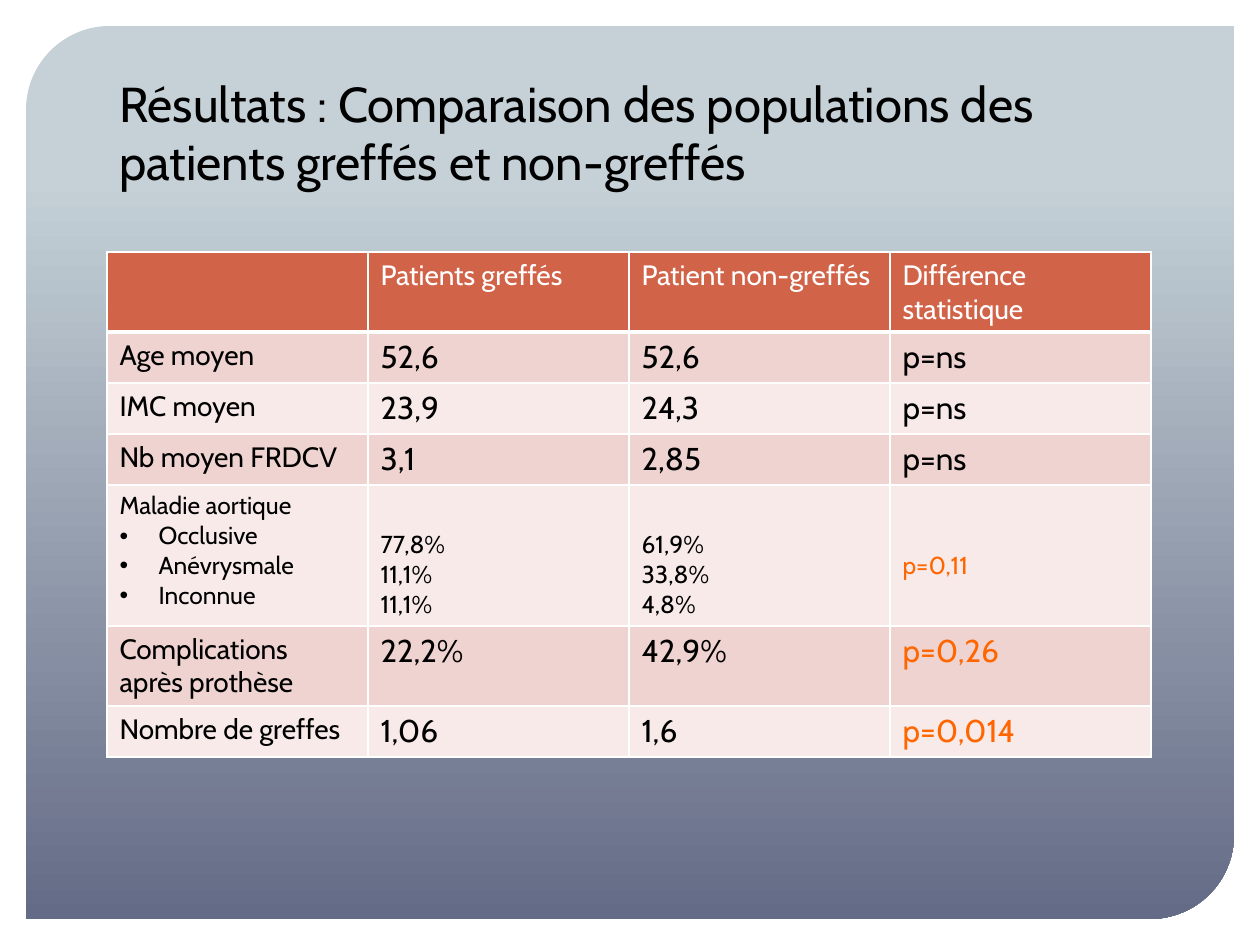
from dataclasses import dataclass

from pptx import Presentation
from pptx.dml.color import RGBColor
from pptx.enum.shapes import MSO_SHAPE
from pptx.enum.text import MSO_ANCHOR
from pptx.oxml import parse_xml
from pptx.oxml.ns import nsdecls
from pptx.util import Emu, Pt


@dataclass(frozen=True)
class Theme:
    font: str = "Cabin"
    ink: str = "000000"
    white: str = "FFFFFF"
    sky: str = "C5D1D7"
    slate: str = "646B86"
    brick: str = "D16349"
    rose: str = "EED3D0"
    blush: str = "F7EAE9"
    orange: str = "FF6600"
    title: int = 28
    value: int = 18
    label: int = 16
    small: int = 14


def px(count):
    return Emu(round(count * 914400 / 126))


def rgb(code):
    return RGBColor.from_string(code)


class Page:
    def __init__(self, deck, theme):
        self.theme = theme
        self.slide = deck.slides.add_slide(deck.slide_layouts[6])

    def panel(self, left, top, width, height):
        shape = self.slide.shapes.add_shape(
            MSO_SHAPE.ROUND_2_DIAG_RECTANGLE, px(left), px(top), px(width), px(height))
        shape.adjustments[0] = 0.094
        shape.adjustments[1] = 0
        shape.shadow.inherit = False
        shape.line.fill.background()
        shape.fill.gradient()
        shape.fill.gradient_angle = 270
        stops = zip(shape.fill.gradient_stops, (0.17, 1),
                    (self.theme.sky, self.theme.slate))
        for stop, place, color in stops:
            stop.position = place
            stop.color.rgb = rgb(color)

    def text(self, frame, lines, size, color, bullets=False):
        """Put each line in its own paragraph; bullets mark all but the first."""
        for i, line in enumerate(lines):
            para = frame.paragraphs[0] if i == 0 else frame.add_paragraph()
            if bullets and i:
                props = para._p.get_or_add_pPr()
                props.set("marL", str(px(39)))
                props.set("indent", str(-px(39)))
                props.append(parse_xml(f'<a:buFont {nsdecls("a")} typeface="Arial"/>'))
                props.append(parse_xml(f'<a:buChar {nsdecls("a")} char="•"/>'))
            run = para.add_run()
            run.text = line
            run.font.name = self.theme.font
            run.font.size = Pt(size)
            run.font.color.rgb = rgb(color)

    def title(self, words, left, top, width, height):
        box = self.slide.shapes.add_textbox(px(left), px(top), px(width), px(height))
        frame = box.text_frame
        frame.word_wrap = True
        frame.vertical_anchor = MSO_ANCHOR.BOTTOM
        self.text(frame, [words], self.theme.title, self.theme.ink)

    def border(self, cell, **widths):
        props = cell._tc.get_or_add_tcPr()
        for i, side in enumerate("LRTB"):
            props.insert(i, parse_xml(
                f'<a:ln{side} {nsdecls("a")} w="{Pt(widths.get(side, 1))}"><a:solidFill>'
                f'<a:srgbClr val="{self.theme.white}"/></a:solidFill></a:ln{side}>'))

    def style(self, row, col, words):
        """Return the type size and colour of a table cell."""
        theme = self.theme
        if row == 0:
            return theme.label, theme.white
        color = theme.orange if words.startswith("p=0") else theme.ink
        if row == DISEASE:
            return theme.small, color
        return (theme.value if col else theme.label), color

    def table(self, rows, heights, left, top, width):
        theme = self.theme
        count = len(rows[0])
        grid = self.slide.shapes.add_table(
            len(rows), count, px(left), px(top), px(width), px(sum(heights))).table
        for col in grid.columns:
            col.width = px(width // count)
        for r, (row, height) in enumerate(zip(rows, heights)):
            grid.rows[r].height = px(height)
            fill = theme.brick if r == 0 else theme.rose if r % 2 else theme.blush
            for c, words in enumerate(row):
                cell = grid.cell(r, c)
                cell.fill.solid()
                cell.fill.fore_color.rgb = rgb(fill)
                self.border(cell, T=3 if r == 1 else 1, B=3 if r == 0 else 1)
                if r == DISEASE:
                    cell.margin_top = px(DROPS[c])
                if words:
                    self.text(cell.text_frame, words.split("\n"),
                              *self.style(r, c, words), bullets=c == 0)


ROWS = [
    ("", "Patients greffés", "Patient non-greffés", "Différence statistique"),
    ("Age moyen", "52,6", "52,6", "p=ns"),
    ("IMC moyen", "23,9", "24,3", "p=ns"),
    ("Nb moyen FRDCV", "3,1", "2,85", "p=ns"),
    ("Maladie aortique\nOcclusive\nAnévrysmale\nInconnue",
     "77,8%\n11,1%\n11,1%", "61,9%\n33,8%\n4,8%", "p=0,11"),
    ("Complications après prothèse", "22,2%", "42,9%", "p=0,26"),
    ("Nombre de greffes", "1,06", "1,6", "p=0,014"),
]
HEIGHTS = [80, 51, 51, 51, 141, 80, 51]
DISEASE = 4
DROPS = [6, 45, 45, 66]  # top margins that line values up with their labels


def main():
    deck = Presentation()
    deck.slide_width, deck.slide_height = px(1260), px(945)
    page = Page(deck, Theme())
    page.panel(26, 26, 1208, 893)
    page.title("Résultats : Comparaison des populations des patients greffés et non-greffés",
               107, 53, 1045, 144)
    page.table(ROWS, HEIGHTS, 107, 252, 1044)
    deck.save("out.pptx")


if __name__ == "__main__":
    main()
